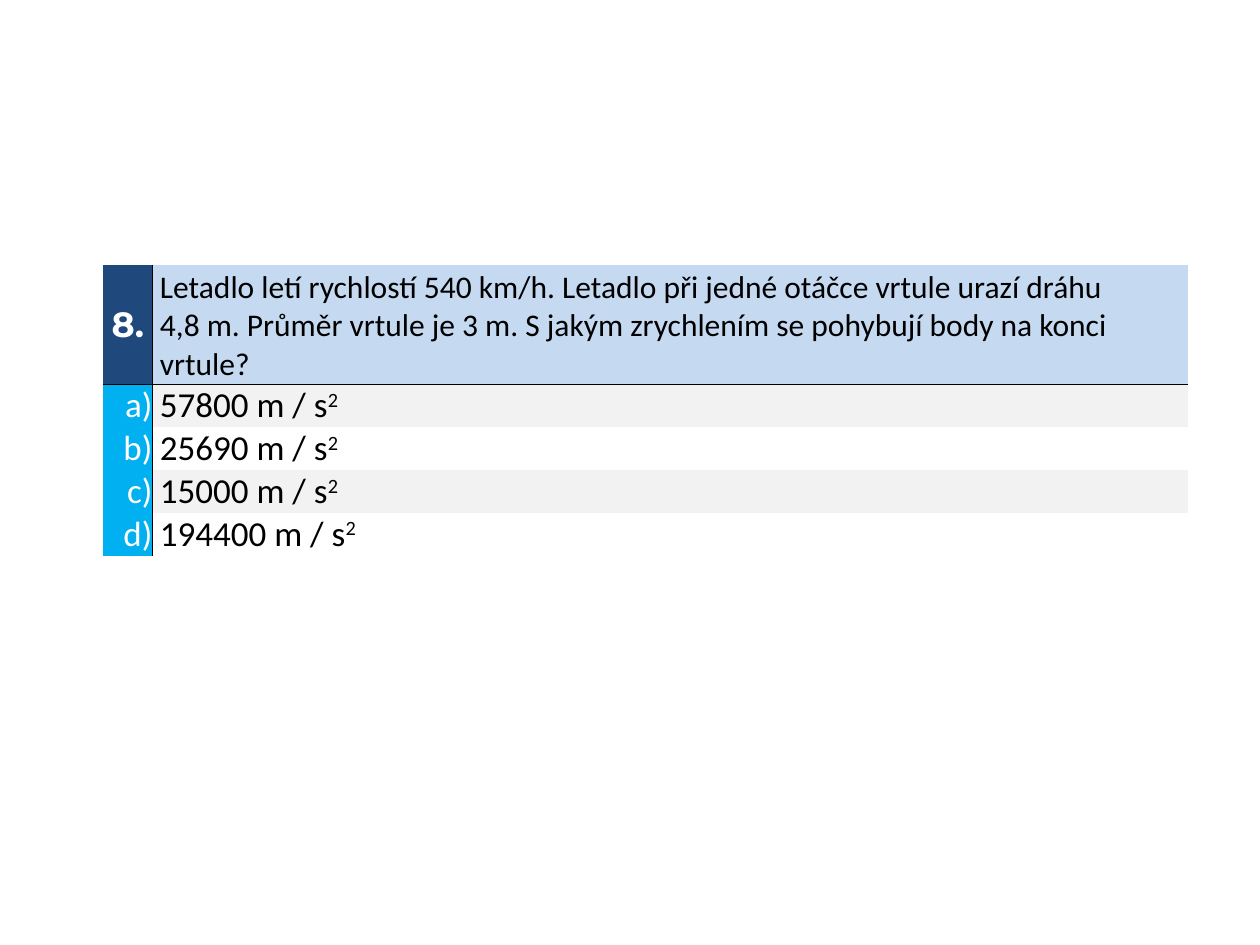
from dataclasses import dataclass

from lxml import etree
from pptx import Presentation
from pptx.dml.color import RGBColor
from pptx.enum.text import MSO_ANCHOR, PP_ALIGN
from pptx.oxml.ns import qn
from pptx.util import Inches, Pt

MIDDLE, BOTTOM, TOP = MSO_ANCHOR.MIDDLE, MSO_ANCHOR.BOTTOM, MSO_ANCHOR.TOP
LEFT, CENTER, RIGHT = PP_ALIGN.LEFT, PP_ALIGN.CENTER, PP_ALIGN.RIGHT

BLACK = RGBColor(0x00, 0x00, 0x00)
WHITE = RGBColor(0xFF, 0xFF, 0xFF)
NAVY = RGBColor(0x1F, 0x49, 0x7D)
PALE_BLUE = RGBColor(0xC5, 0xD9, 0xF1)
CYAN = RGBColor(0x00, 0xB0, 0xF0)
LIGHT_GREY = RGBColor(0xF2, 0xF2, 0xF2)

QUESTION = [
    "Letadlo letí rychlostí 540 km/h. Letadlo při jedné otáčce vrtule urazí dráhu",
    "4,8 m. Průměr vrtule je 3 m. S jakým zrychlením se pohybují body na konci",
    "vrtule?",
]
ANSWERS = [("a)", "57800"), ("b)", "25690"), ("c)", "15000"), ("d)", "194400")]
COLUMN_WIDTHS = [Inches(0.39), Inches(8.22)]
HEADER_HEIGHT, ANSWER_HEIGHT = Inches(0.95), Inches(0.34)
TEXT_INDENT = Inches(0.06)


@dataclass
class CellStyle:
    fill: RGBColor | None
    color: RGBColor
    size: int = 20
    font: str = "Calibri"
    bold: bool = False
    align: PP_ALIGN = LEFT
    anchor: MSO_ANCHOR = MIDDLE
    indent: int = 0
    top: int = 0


def set_borders(cell, black_sides: str) -> None:
    """Draw a thin black line on the listed sides and none on the others."""
    properties = cell._tc.get_or_add_tcPr()
    for side in "LRTB":
        line = etree.SubElement(properties, qn(f"a:ln{side}"), w=str(Pt(0.5)))
        if side in black_sides:
            solid = etree.SubElement(line, qn("a:solidFill"))
            etree.SubElement(solid, qn("a:srgbClr"), val=str(BLACK))
        else:
            etree.SubElement(line, qn("a:noFill"))


def fill_cell(cell, lines: list[str], style: CellStyle, borders: str,
              superscript: str = "") -> None:
    set_borders(cell, borders)
    if style.fill is None:
        cell.fill.background()
    else:
        cell.fill.solid()
        cell.fill.fore_color.rgb = style.fill
    cell.margin_right = cell.margin_bottom = 0
    cell.margin_left, cell.margin_top = style.indent, style.top
    cell.vertical_anchor = style.anchor
    cell.text_frame.text = "\n".join(lines)
    if superscript:
        span = cell.text_frame.paragraphs[-1].add_run()
        span.text = superscript
        span._r.get_or_add_rPr().set("baseline", "30000")
    for para in cell.text_frame.paragraphs:
        para.alignment = style.align
        for span in para.runs:
            span.font.name = style.font
            span.font.size = Pt(style.size)
            span.font.bold = style.bold
            span.font.color.rgb = style.color


def main() -> None:
    deck = Presentation()
    deck.slide_width, deck.slide_height = Inches(10), Inches(7.5)
    page = deck.slides.add_slide(deck.slide_layouts[6])

    # Table grid
    height = HEADER_HEIGHT + ANSWER_HEIGHT * len(ANSWERS)
    table = page.shapes.add_table(len(ANSWERS) + 1, 2, Inches(0.82), Inches(2.1),
                                  sum(COLUMN_WIDTHS), height).table
    table.first_row = table.horz_banding = False
    for column, width in zip(table.columns, COLUMN_WIDTHS):
        column.width = width
    for index, row in enumerate(table.rows):
        row.height = ANSWER_HEIGHT if index else HEADER_HEIGHT

    # Question row
    number = CellStyle(NAVY, WHITE, font="Montserrat", bold=True, align=CENTER)
    question = CellStyle(PALE_BLUE, BLACK, size=18, anchor=TOP,
                         indent=TEXT_INDENT, top=Inches(0.03))
    fill_cell(table.cell(0, 0), ["8."], number, "RB")
    fill_cell(table.cell(0, 1), QUESTION, question, "LB")

    # Answer rows, every other one shaded
    letter_style = CellStyle(CYAN, WHITE, align=RIGHT)
    for row, (letter, value) in enumerate(ANSWERS, start=1):
        top_line = "T" if row == 1 else ""
        answer = CellStyle(LIGHT_GREY if row % 2 else None, BLACK,
                           anchor=BOTTOM, indent=TEXT_INDENT)
        fill_cell(table.cell(row, 0), [letter], letter_style, "R" + top_line)
        fill_cell(table.cell(row, 1), [f"{value} m / s"], answer, "L" + top_line, "2")

    deck.save("out.pptx")


if __name__ == "__main__":
    main()
